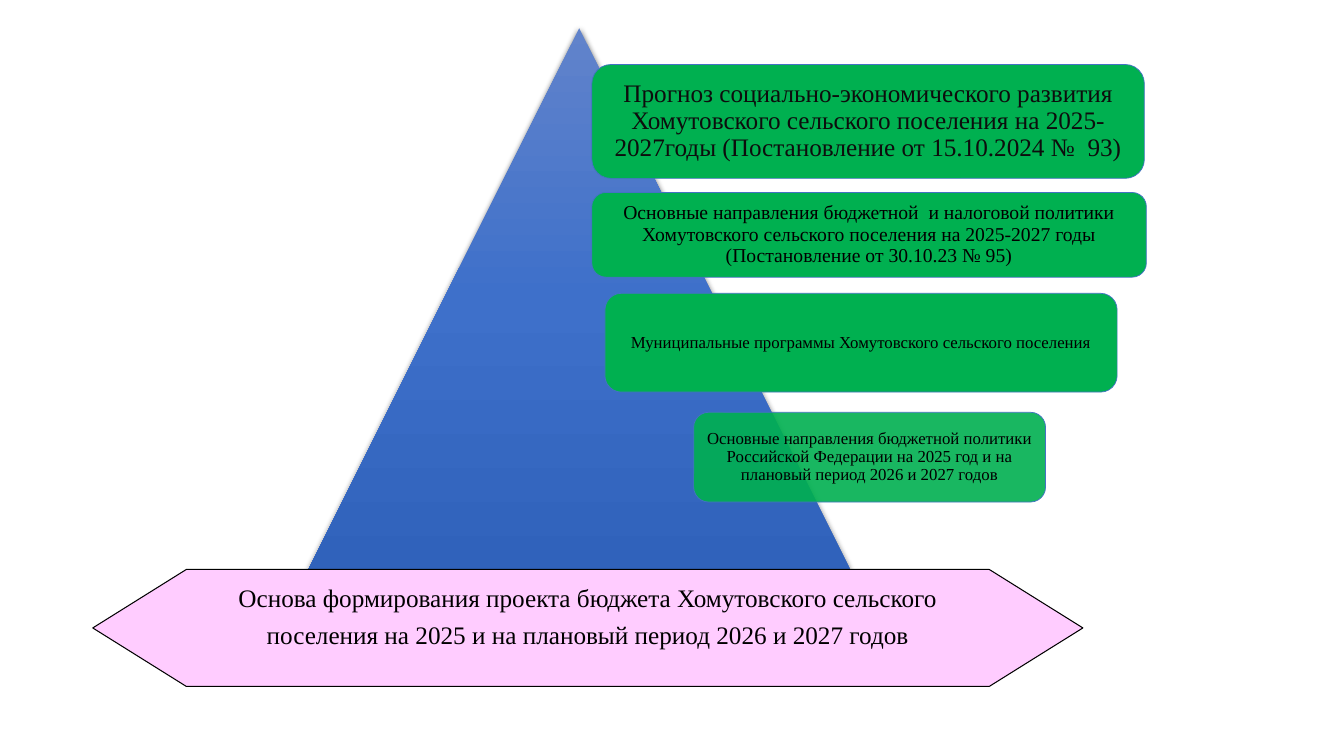
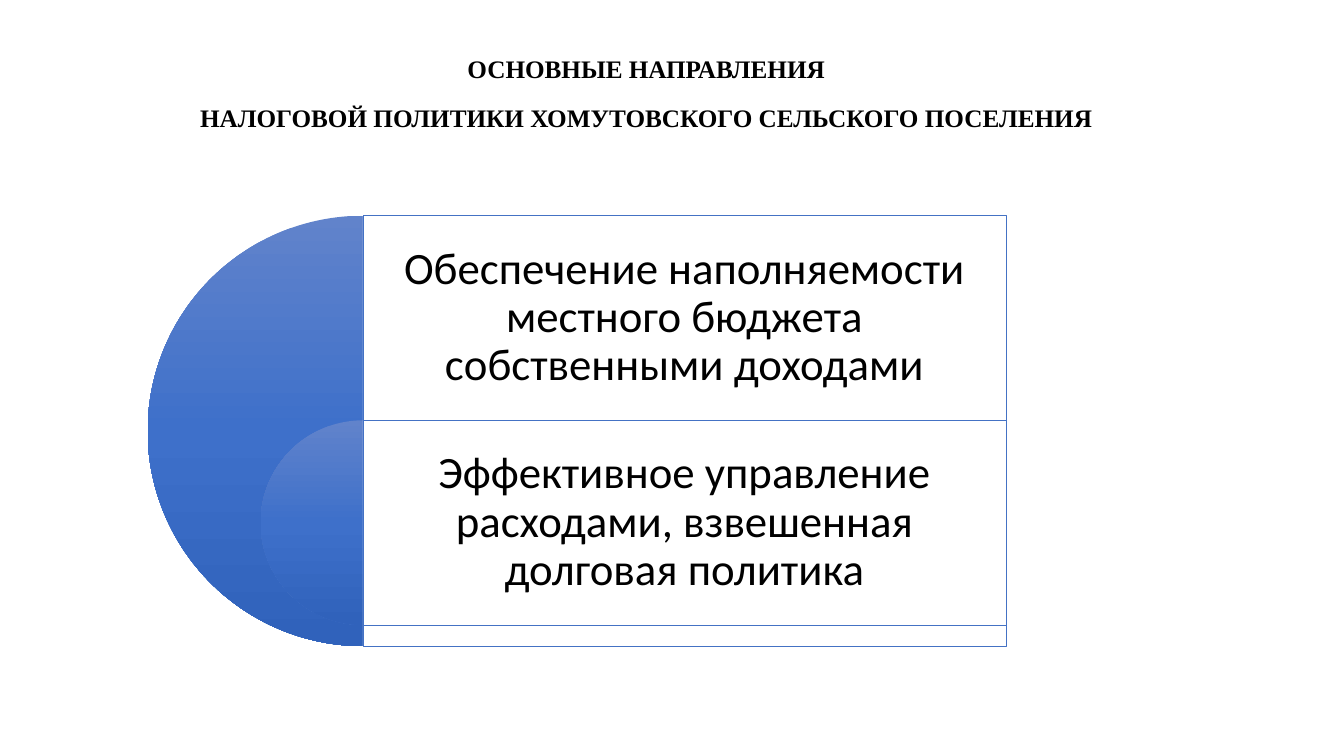
from copy import deepcopy
from dataclasses import dataclass

from lxml import etree
from pptx import Presentation
from pptx.dml.color import RGBColor
from pptx.enum.shapes import MSO_SHAPE
from pptx.enum.text import MSO_ANCHOR, MSO_AUTO_SIZE, PP_ALIGN
from pptx.oxml import parse_xml
from pptx.oxml.ns import nsdecls, qn
from pptx.util import Inches, Pt


@dataclass(frozen=True)
class Theme:
    serif: str = "Times New Roman"
    sans: str = "Calibri"
    black: str = "000000"
    dark: str = "0D0D0D"
    white: str = "FFFFFF"
    green: str = "00B050"
    pink: str = "FFCCFF"
    outline: str = "4472C4"
    gradient: tuple = ((0, "6183CB"), (0.5, "3E70CA"), (1, "3062BB"))
    heading: int = 18
    medium: int = 14
    small: int = 12
    large: int = 32


theme = Theme()


def add_figure(page, kind, bounds, fill=None, line=None, line_width=0.5):
    """Add a preset shape; without a fill colour it gets the blue gradient."""
    shape = page.shapes.add_shape(kind, *[Inches(value) for value in bounds])
    shape.shadow.inherit = False
    if fill:
        shape.fill.solid()
        shape.fill.fore_color.rgb = RGBColor.from_string(fill)
    else:
        shape.fill.gradient()
        shape.fill.gradient_angle = 270
        stop_list = shape._element.spPr.find(".//" + qn("a:gsLst"))
        stop_list.append(deepcopy(stop_list[0]))
        for stop, (position, color) in zip(shape.fill.gradient_stops, theme.gradient):
            stop.position = position
            stop.color.rgb = RGBColor.from_string(color)
    if line:
        shape.line.color.rgb = RGBColor.from_string(line)
        shape.line.width = Pt(line_width)
    else:
        shape.line.fill.background()
    return shape


def write(shape, text, size, font=theme.serif, color=theme.black, bold=False,
          spacing=0.9, after=0, anchor=MSO_ANCHOR.MIDDLE, inset=None):
    frame = shape.text_frame
    frame.text = text
    frame.word_wrap = True
    frame.auto_size = MSO_AUTO_SIZE.NONE
    frame.vertical_anchor = anchor
    if inset is not None:
        frame.margin_left = frame.margin_right = Inches(inset)
        frame.margin_top = frame.margin_bottom = Inches(inset)
    for paragraph in frame.paragraphs:
        paragraph.alignment = PP_ALIGN.CENTER
        paragraph.line_spacing = spacing
        paragraph.space_before = Pt(0)
        paragraph.space_after = Pt(after)
        for span in paragraph.runs:
            span.font.name = font
            span.font.size = Pt(size)
            span.font.bold = bold
            span.font.color.rgb = RGBColor.from_string(color)


deck = Presentation()
deck.slide_width, deck.slide_height = Inches(13.33), Inches(7.5)
title_only, blank = deck.slide_layouts[5], deck.slide_layouts[6]
heading_style = {"size": theme.heading, "spacing": 1.25, "after": 8,
                 "anchor": MSO_ANCHOR.TOP}

# Slide 1: what the budget is based on
page = deck.slides.add_slide(blank)
pyramid = add_figure(page, MSO_SHAPE.ISOSCELES_TRIANGLE, (3.06, 0.28, 5.37, 5.37))
effects = pyramid._element.spPr.find(qn("a:effectLst"))
effects.append(parse_xml(
    f'<a:outerShdw {nsdecls("a")} blurRad="{Pt(4.5)}" dist="{Pt(1.5)}" dir="5400000" '
    f'rotWithShape="0"><a:srgbClr val="{theme.black}"><a:alpha val="63000"/>'
    '</a:srgbClr></a:outerShdw>'))

cards = [
    ((5.87, 0.64, 5.48, 1.13), theme.heading, theme.dark, 0.07,
     "Прогноз социально-экономического развития Хомутовского сельского поселения "
     "на 2025-2027годы (Постановление от 15.10.2024 №  93)"),
    ((5.87, 1.91, 5.5, 0.84), theme.medium, theme.black, 0.06,
     "Основные направления бюджетной  и налоговой политики Хомутовского сельского "
     "поселения на 2025-2027 годы (Постановление от 30.10.23 № 95)"),
    ((6, 2.91, 5.08, 0.98), theme.small, theme.black, 0.05,
     "Муниципальные программы Хомутовского сельского поселения"),
    ((6.88, 4.09, 3.49, 0.89), theme.small, theme.black, 0.05,
     "Основные направления бюджетной политики Российской Федерации на 2025 год "
     "и на плановый период 2026 и 2027 годов"),
]
for bounds, size, color, inset, text in cards:
    card = add_figure(page, MSO_SHAPE.ROUNDED_RECTANGLE, bounds, theme.green, theme.outline)
    write(card, text, size, color=color, inset=inset)
# The lowest card lets the pyramid show through
card_color = card._element.spPr.find(qn("a:solidFill")).find(qn("a:srgbClr"))
etree.SubElement(card_color, qn("a:alpha")).set("val", "90000")

banner = add_figure(page, MSO_SHAPE.LEFT_RIGHT_ARROW, (0.92, 5.65, 9.82, 1.16),
                    theme.pink, theme.black, 0.75)
banner.adjustments[0], banner.adjustments[1] = 1, 0.8
write(banner, "Основа формирования проекта бюджета Хомутовского сельского поселения "
      "на 2025 и на плановый период 2026 и 2027 годов", **heading_style)

# Slide 2: tax policy
page = deck.slides.add_slide(title_only)
title = page.shapes.title
title.left, title.top = Inches(1.47), Inches(0.4)
title.width, title.height = Inches(9.88), Inches(0.97)
write(title, "ОСНОВНЫЕ НАПРАВЛЕНИЯ\n"
      "НАЛОГОВОЙ ПОЛИТИКИ ХОМУТОВСКОГО СЕЛЬСКОГО ПОСЕЛЕНИЯ", bold=True, **heading_style)

panel_left, panel_width, row_height, inset = 3.6, 6.38, 2.03, 0.13
goals = [
    (2.14, 4.27, "Обеспечение наполняемости местного бюджета собственными доходами"),
    (4.17, 2.03, "Эффективное управление расходами, взвешенная долговая политика"),
]
for top, height, text in goals:
    half_disc = add_figure(page, MSO_SHAPE.PIE,
                           (panel_left - height / 2, top, height, height))
    half_disc.adjustments[0], half_disc.adjustments[1] = 54, 162  # 90° to 270°
    panel = add_figure(page, MSO_SHAPE.RECTANGLE, (panel_left, top, panel_width, height),
                       theme.white, theme.outline)
    write(panel, text, theme.large, font=theme.sans, inset=inset)
    panel.text_frame.margin_bottom = Inches(height - row_height + inset)

deck.save("out.pptx")
